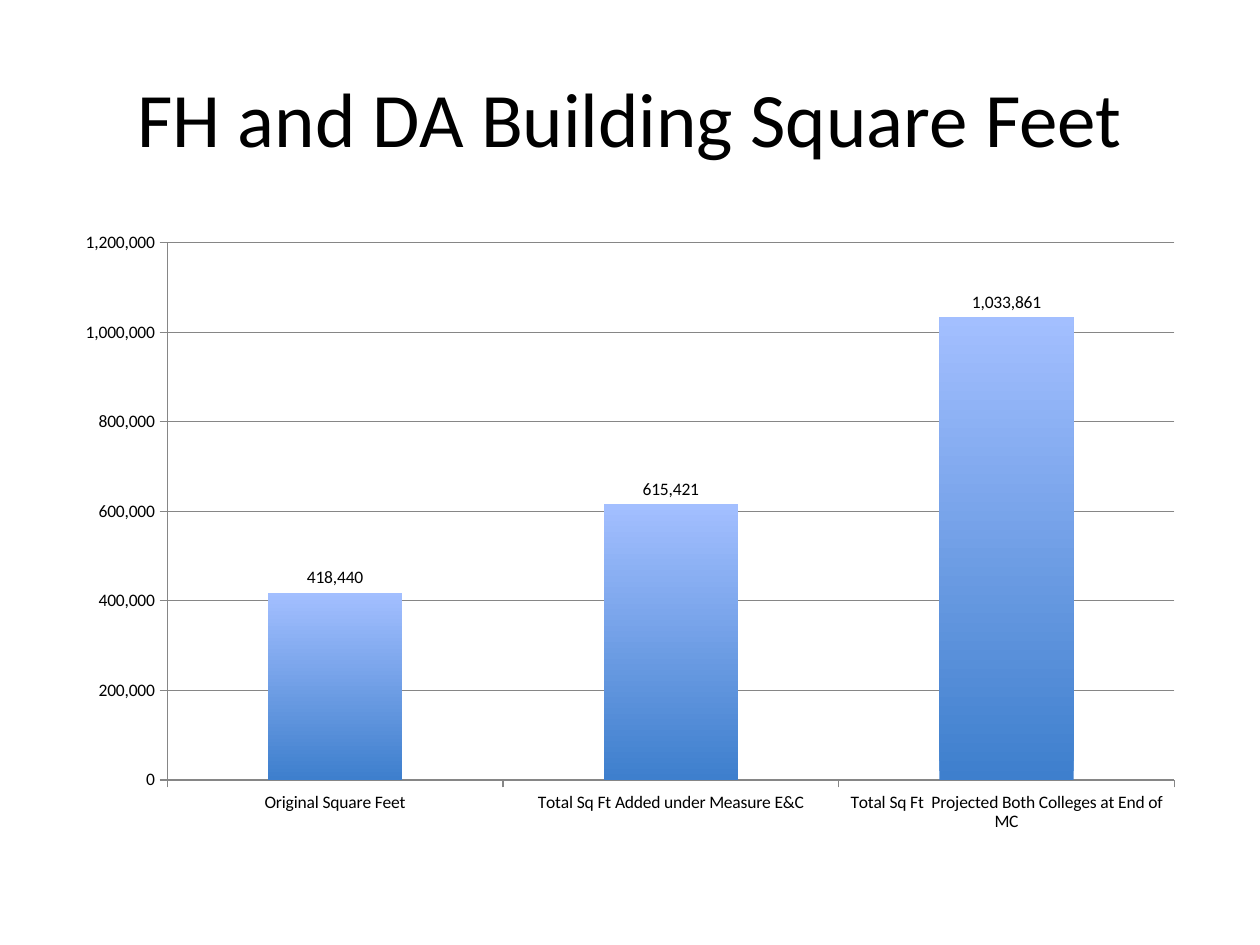
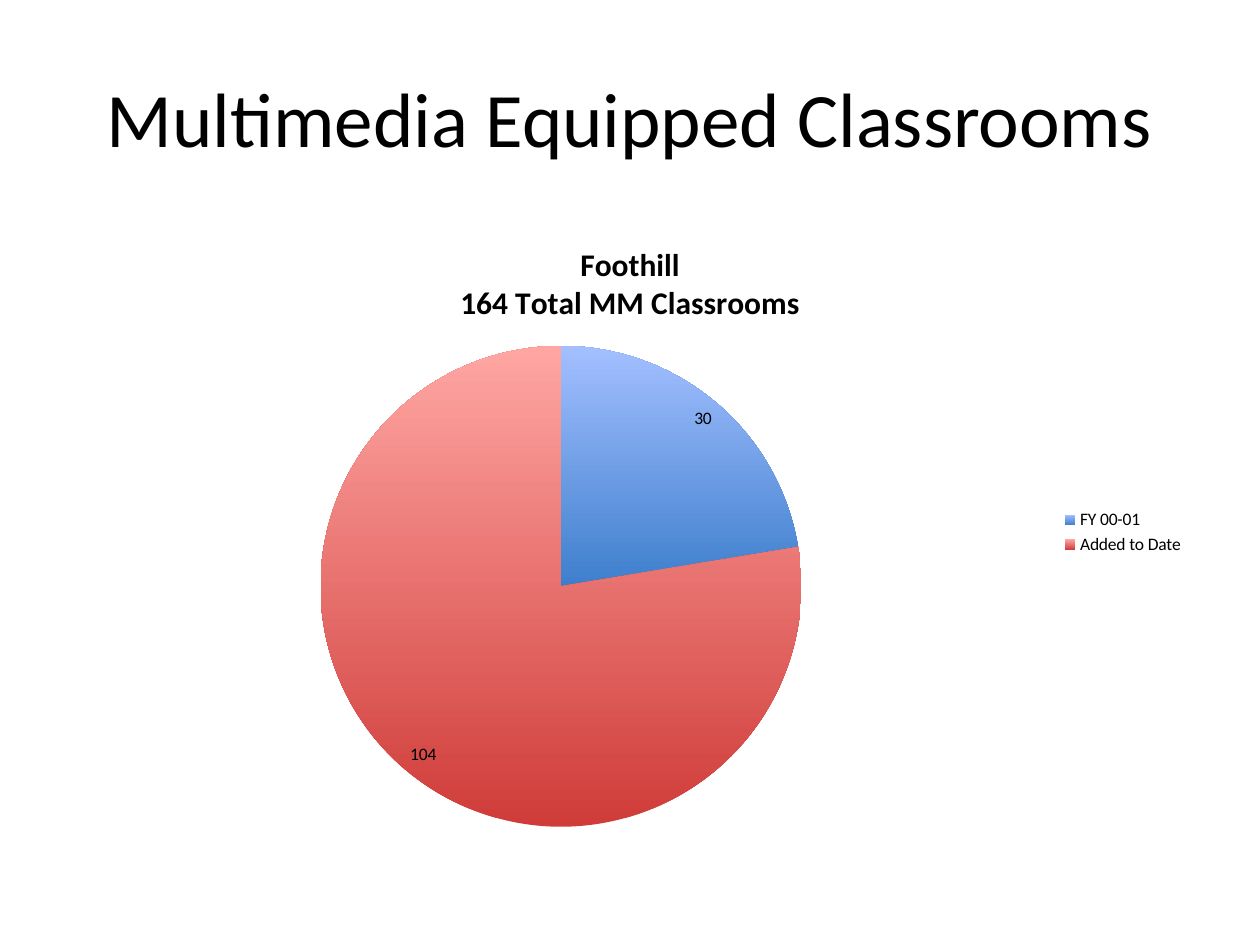
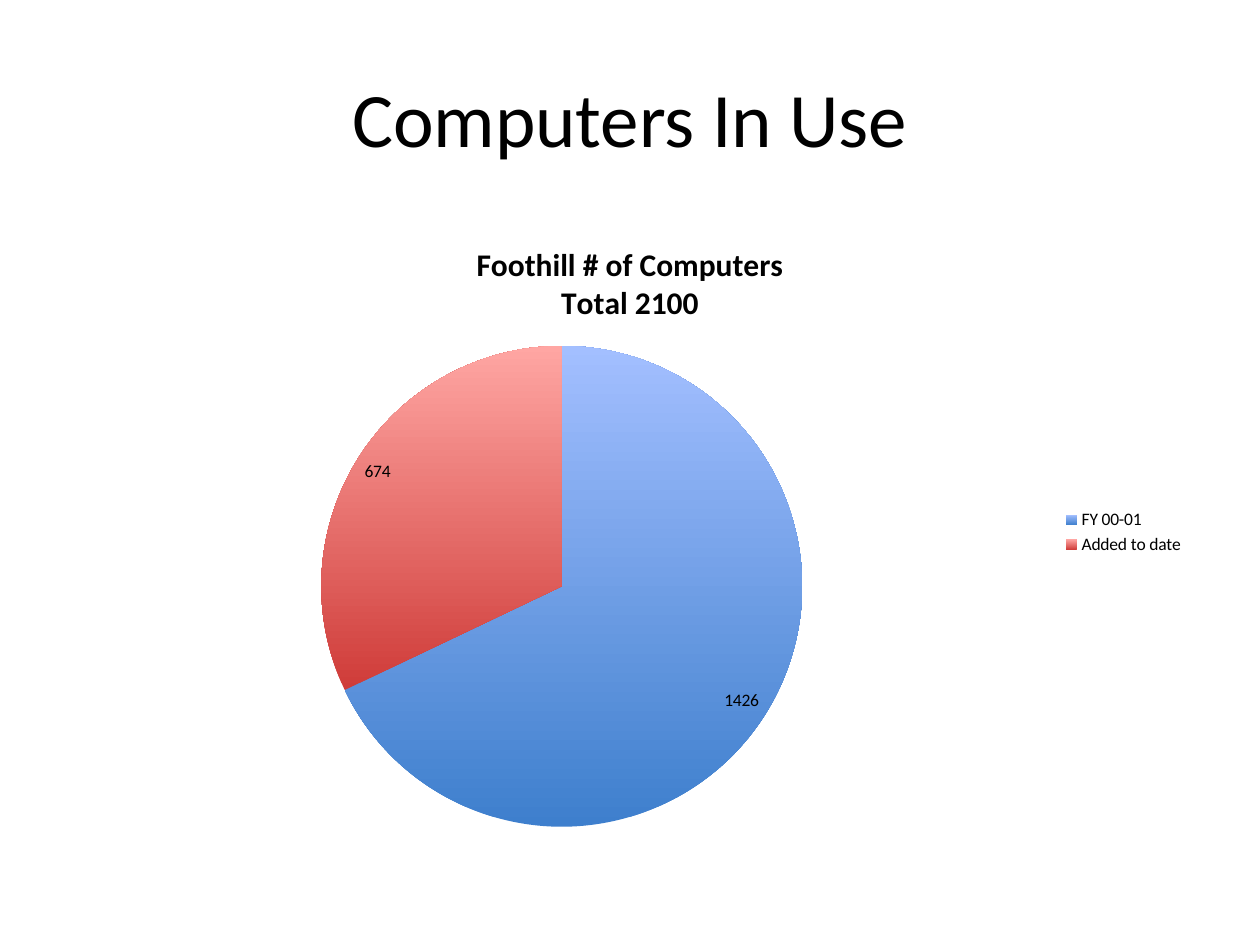
from dataclasses import dataclass
from typing import Any

from pptx import Presentation
from pptx.chart.chart import Chart
from pptx.chart.data import CategoryChartData
from pptx.dml.color import RGBColor
from pptx.dml.fill import FillFormat
from pptx.enum.chart import XL_CHART_TYPE, XL_LABEL_POSITION, XL_LEGEND_POSITION, XL_TICK_MARK
from pptx.enum.text import MSO_ANCHOR, PP_ALIGN
from pptx.presentation import Presentation as Deck
from pptx.text.text import Font
from pptx.util import Inches, Pt

COLORS = {
    "background": "FFFFFF",
    "text": "000000",
    "axis": "868686",
    "blue_dark": "3E7FCD",
    "blue_light": "A3BFFF",
    "red_dark": "CF3C39",
    "red_light": "FFA6A3",
}
SLIDE_WIDTH, SLIDE_HEIGHT = Inches(10), Inches(7.5)
MARGIN = 0.05
TITLE_TOP, TITLE_HEIGHT = 0.04, 1 / 6
CHART_TOP, CHART_HEIGHT = 7 / 30, 0.66

HEADING_FONT = {"name": "Calibri", "size": Pt(44), "bold": False}
CHART_FONT = {"name": "Calibri", "size": Pt(10), "bold": False}
CAPTION_FONT = {"name": "Calibri", "size": Pt(18), "bold": True}
AXIS_FORMAT = {"major_tick_mark": XL_TICK_MARK.OUTSIDE, "minor_tick_mark": XL_TICK_MARK.NONE}
LABEL_FORMAT = {"show_value": True, "number_format_is_linked": False}
LEGEND_FORMAT = {"position": XL_LEGEND_POSITION.RIGHT, "include_in_layout": False}


@dataclass(frozen=True)
class Statistic:
    """A heading with the measured values below it."""

    heading: str
    values: dict[str, int]
    caption: str = ""


STATISTICS = [
    Statistic(
        "FH and DA Building Square Feet",
        {
            "Original Square Feet": 418440,
            "Total Sq Ft Added under Measure E&C": 615421,
            "Total Sq Ft  Projected Both Colleges at End of MC": 1033861,
        },
    ),
    Statistic(
        "Multimedia Equipped Classrooms",
        {"FY 00-01": 30, "Added to Date": 104},
        "Foothill\n164 Total MM Classrooms",
    ),
    Statistic(
        "Computers In Use",
        {"FY 00-01": 1426, "Added to date": 674},
        "Foothill # of Computers\nTotal 2100",
    ),
]


def apply(target: Any, settings: dict[str, Any]) -> None:
    """Set every attribute named in the settings."""
    for attribute, setting in settings.items():
        setattr(target, attribute, setting)


def color(key: str) -> RGBColor:
    """Look up a colour of the deck."""
    return RGBColor.from_string(COLORS[key])


def style_font(font: Font, settings: dict[str, Any]) -> None:
    """Format a font in the deck's text colour."""
    apply(font, settings)
    font.color.rgb = color("text")


def shade(fill: FillFormat, hue: str) -> None:
    """Fill from dark at the bottom to light at the top."""
    fill.gradient()
    fill.gradient_angle = 90
    for stop, tone in zip(fill.gradient_stops, ("dark", "light")):
        stop.color.rgb = color(f"{hue}_{tone}")


def frame(top: float, height: float) -> dict[str, int]:
    """Give the box between the margins for shares of the slide height."""
    return {
        "left": int(SLIDE_WIDTH * MARGIN),
        "top": int(SLIDE_HEIGHT * top),
        "width": int(SLIDE_WIDTH * (1 - 2 * MARGIN)),
        "height": int(SLIDE_HEIGHT * height),
    }


def style_columns(chart: Chart) -> None:
    """Format the axes, gridlines and bars of a column chart."""
    for axis in (chart.category_axis, chart.value_axis):
        apply(axis, AXIS_FORMAT)
    chart.value_axis.has_major_gridlines = True
    chart.value_axis.tick_labels.number_format = "#,##0"
    chart.value_axis.tick_labels.number_format_is_linked = False
    for ruled in (chart.category_axis, chart.value_axis, chart.value_axis.major_gridlines):
        ruled.format.line.color.rgb = color("axis")
        ruled.format.line.width = Pt(0.75)
    chart.plots[0].gap_width = 150
    shade(chart.series[0].format.fill, "blue")


def style_pie(chart: Chart, caption: str) -> None:
    """Format the caption, legend and slices of a pie chart."""
    chart.has_title = True
    chart.chart_title.include_in_layout = False
    chart.chart_title.text_frame.text = caption
    for line in chart.chart_title.text_frame.paragraphs:
        style_font(line.font, CAPTION_FONT)
        for run in line.runs:
            style_font(run.font, CAPTION_FONT)
    chart.has_legend = True
    apply(chart.legend, LEGEND_FORMAT)
    for index, hue in enumerate(("blue", "red")):
        shade(chart.series[0].points[index].format.fill, hue)


def add_statistic(deck: Deck, statistic: Statistic) -> None:
    """Add a slide with a heading and a chart."""
    slide = deck.slides.add_slide(deck.slide_layouts[5])
    slide.background.fill.solid()
    slide.background.fill.fore_color.rgb = color("background")

    heading = slide.shapes.title
    apply(heading, frame(TITLE_TOP, TITLE_HEIGHT))
    heading.text_frame.text = statistic.heading
    heading.text_frame.vertical_anchor = MSO_ANCHOR.MIDDLE
    heading.text_frame.paragraphs[0].alignment = PP_ALIGN.CENTER
    style_font(heading.text_frame.paragraphs[0].runs[0].font, HEADING_FONT)

    is_pie = bool(statistic.caption)
    measures = CategoryChartData()
    measures.categories = list(statistic.values)
    measures.add_series("Series 1", list(statistic.values.values()))
    kind = XL_CHART_TYPE.PIE if is_pie else XL_CHART_TYPE.COLUMN_CLUSTERED
    box = frame(CHART_TOP, CHART_HEIGHT)
    chart = slide.shapes.add_chart(
        kind, box["left"], box["top"], box["width"], box["height"], measures
    ).chart
    apply(chart, {"has_title": False, "has_legend": False})
    style_font(chart.font, CHART_FONT)

    plot = chart.plots[0]
    apply(plot, {"vary_by_categories": is_pie, "has_data_labels": True})
    apply(plot.data_labels, LABEL_FORMAT)
    plot.data_labels.number_format = "General" if is_pie else "#,##0"
    plot.data_labels.position = (
        XL_LABEL_POSITION.INSIDE_END if is_pie else XL_LABEL_POSITION.OUTSIDE_END
    )
    if is_pie:
        style_pie(chart, statistic.caption)
    else:
        style_columns(chart)


def main() -> None:
    """Build and save the deck."""
    deck = Presentation()
    apply(deck, {"slide_width": SLIDE_WIDTH, "slide_height": SLIDE_HEIGHT})
    for statistic in STATISTICS:
        add_statistic(deck, statistic)
    deck.save("out.pptx")


if __name__ == "__main__":
    main()
